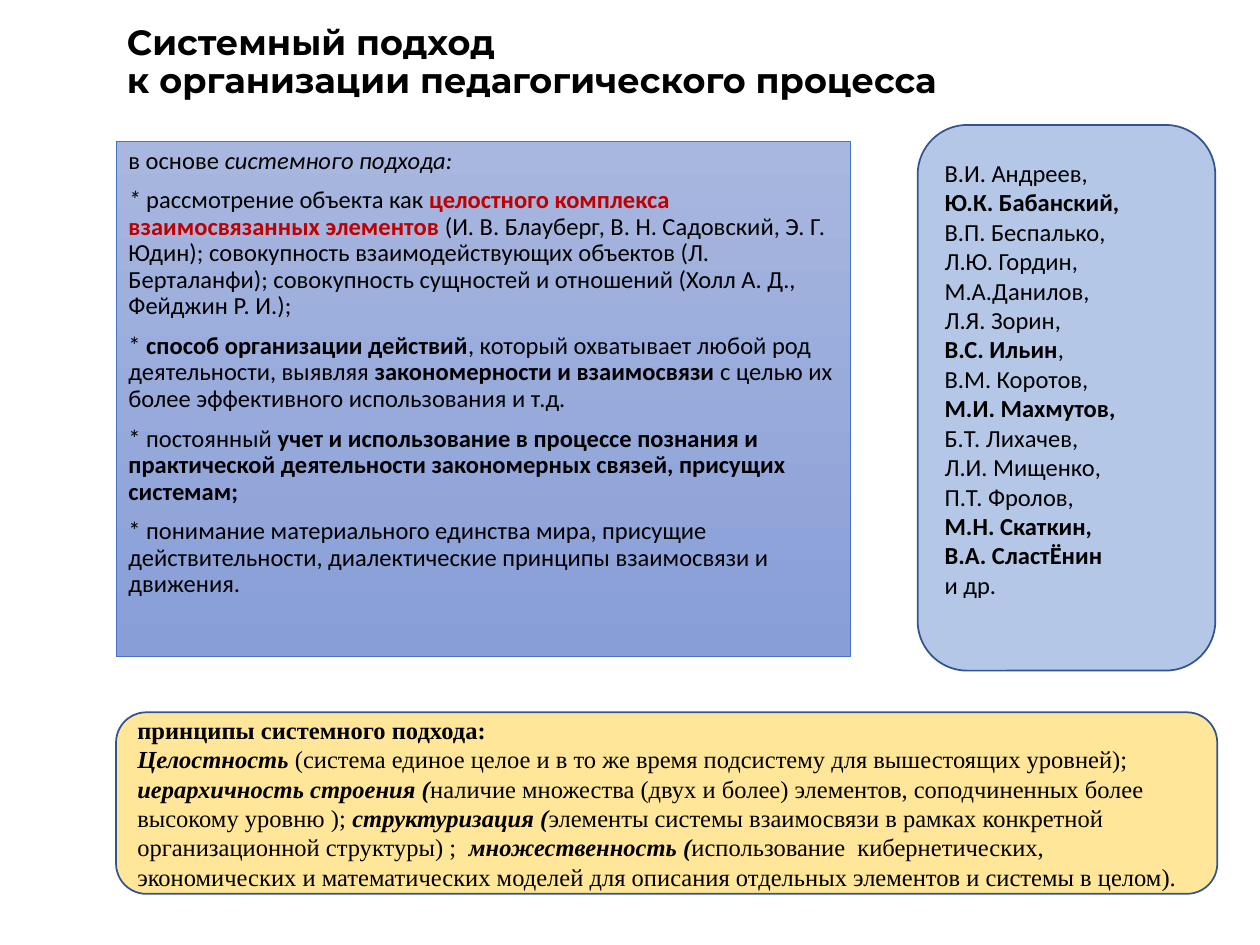
from dataclasses import dataclass
from typing import NamedTuple, Optional

from pptx import Presentation
from pptx.dml.color import RGBColor
from pptx.enum.shapes import MSO_SHAPE
from pptx.enum.text import MSO_ANCHOR, PP_ALIGN
from pptx.util import Cm, Pt

RECT, ROUNDED = MSO_SHAPE.RECTANGLE, MSO_SHAPE.ROUNDED_RECTANGLE
TOP, MIDDLE = MSO_ANCHOR.TOP, MSO_ANCHOR.MIDDLE
LEFT = PP_ALIGN.LEFT

BLACK = RGBColor(0x00, 0x00, 0x00)
RED = RGBColor(0xC0, 0x00, 0x00)
BLUE = RGBColor(0x44, 0x72, 0xC4)
NAVY = RGBColor(0x32, 0x54, 0x91)
PALE_BLUE = RGBColor(0xB4, 0xC7, 0xE7)
YELLOW = RGBColor(0xFF, 0xE6, 0x99)
GRADIENT = (RGBColor(0xA8, 0xB7, 0xDF), RGBColor(0x88, 0x9E, 0xD7))


class Run(NamedTuple):
    text: str
    bold: bool = False
    italic: bool = False
    color: Optional[RGBColor] = None


@dataclass
class TextStyle:
    font: str = "Calibri"
    size: float = 14
    bold: bool = False
    anchor: MSO_ANCHOR = MIDDLE
    line_spacing: float = 1.0
    space_before: float = 0
    bottom: float = 0.13


@dataclass
class Panel:
    kind: MSO_SHAPE
    box: tuple[float, float, float, float]
    fill: tuple[RGBColor, ...]
    line: RGBColor
    line_width: float
    style: TextStyle
    paragraphs: list[list[Run]]


def write_text(tf, paragraphs: list[list[Run]], style: TextStyle) -> None:
    tf.word_wrap = True
    tf.vertical_anchor = style.anchor
    tf.margin_bottom = Cm(style.bottom)
    for i, runs in enumerate(paragraphs):
        p = tf.add_paragraph() if i else tf.paragraphs[0]
        p.alignment = LEFT
        p.line_spacing = style.line_spacing
        p.space_before = Pt(style.space_before)
        p.font.name = style.font
        p.font.size = Pt(style.size)
        p.font.bold = style.bold
        p.font.color.rgb = BLACK
        for run in runs:
            r = p.add_run()
            r.text = run.text
            if run.bold:
                r.font.bold = True
            if run.italic:
                r.font.italic = True
            if run.color is not None:
                r.font.color.rgb = run.color


def draw_panel(slide, panel: Panel) -> None:
    s = slide.shapes.add_shape(panel.kind, *map(Cm, panel.box))
    s.shadow.inherit = False
    if len(panel.fill) > 1:
        s.fill.gradient()
        s.fill.gradient_angle = 270
        for stop, color, position in zip(s.fill.gradient_stops, panel.fill, (0, 1)):
            stop.color.rgb = color
            stop.position = position
    else:
        s.fill.solid()
        s.fill.fore_color.rgb = panel.fill[0]
    s.line.color.rgb = panel.line
    s.line.width = Pt(panel.line_width)
    write_text(s.text_frame, panel.paragraphs, panel.style)


TITLE = [[Run("Системный подход")], [Run("к организации педагогического процесса")]]
TITLE_STYLE = TextStyle("Montserrat", 20, bold=True, line_spacing=0.9)

FOUNDATIONS = [
    [Run("в основе "), Run("системного подхода:", italic=True)],
    [
        Run("* ", italic=True),
        Run("рассмотрение объекта как "),
        Run("целостного комплекса взаимосвязанных элементов", bold=True, color=RED),
        Run(" (И. В. Блауберг, В. Н. Садовский, Э. Г. Юдин); совокупность "
            "взаимодействующих объектов (Л. Берталанфи); совокупность сущностей "
            "и отношений (Холл А. Д., Фейджин Р. И.);"),
    ],
    [
        Run("* "),
        Run("способ организации действий", bold=True),
        Run(", который охватывает любой род деятельности, выявляя "),
        Run("закономерности и взаимосвязи", bold=True),
        Run(" с целью их более эффективного использования и т.д."),
    ],
    [
        Run("* постоянный "),
        Run("учет и использование в процессе познания и практической деятельности "
            "закономерных связей, присущих системам;", bold=True),
    ],
    [Run("* понимание материального единства мира, присущие действительности, "
         "диалектические принципы взаимосвязи и движения.")],
]

SCHOLARS = [
    [Run("В.И. Андреев,")],
    [Run("Ю.К. Бабанский,", bold=True)],
    [Run("В.П. Беспалько,")],
    [Run("Л.Ю. Гордин,")],
    [Run("М.А.Данилов,")],
    [Run("Л.Я. Зорин,")],
    [Run("B.C. Ильин", bold=True), Run(",")],
    [Run("В.М. Коротов,")],
    [Run("М.И. Махмутов,", bold=True)],
    [Run("Б.Т. Лихачев,")],
    [Run("Л.И. Мищенко,")],
    [Run("П.Т. Фролов,")],
    [Run("М.Н. Скаткин,", bold=True)],
    [Run("В.А. СластЁнин", bold=True)],
    [Run("и др.")],
]

PRINCIPLES = [
    [Run("принципы системного подхода:", bold=True)],
    [
        Run("Целостность", bold=True, italic=True),
        Run(" (система единое целое и в то же время подсистему для вышестоящих уровней); "),
        Run("иерархичность строения (", bold=True, italic=True),
        Run("наличие множества (двух и более) элементов, соподчиненных более "
            "высокому уровню ); "),
        Run("структуризация (", bold=True, italic=True),
        Run("элементы системы взаимосвязи в рамках конкретной организационной "
            "структуры) ;  "),
        Run("множественность (", bold=True, italic=True),
        Run("использование  кибернетических, экономических и математических моделей "
            "для описания отдельных элементов и системы в целом)."),
    ],
]

PANELS = [
    Panel(RECT, (2.34, 2.86, 14.81, 10.37), GRADIENT, BLUE, 0.5,
          TextStyle(anchor=TOP, line_spacing=0.9, space_before=7.5), FOUNDATIONS),
    Panel(ROUNDED, (18.5, 2.52, 6, 11), (PALE_BLUE,), NAVY, 1,
          TextStyle(bottom=0.9), SCHOLARS),
    Panel(ROUNDED, (2.34, 14.36, 22.2, 3.66), (YELLOW,), NAVY, 1,
          TextStyle("Times New Roman"), PRINCIPLES),
]


def main() -> None:
    prs = Presentation()
    prs.slide_width, prs.slide_height = Cm(25.4), Cm(19.05)
    slide = prs.slides.add_slide(prs.slide_layouts[6])
    title = slide.shapes.add_textbox(Cm(2.31), Cm(0.33), Cm(20.12), Cm(1.9))
    write_text(title.text_frame, TITLE, TITLE_STYLE)
    for panel in PANELS:
        draw_panel(slide, panel)
    prs.save("out.pptx")


if __name__ == "__main__":
    main()
